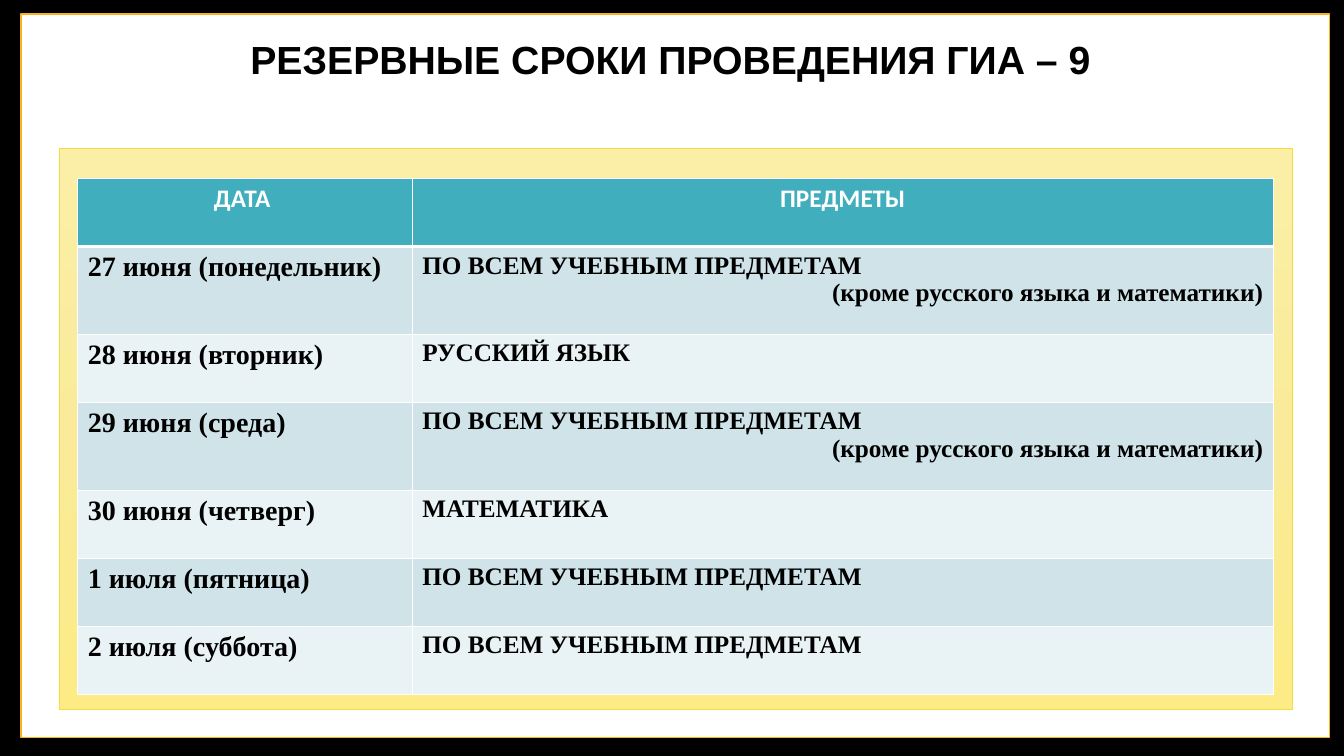
import copy

import lxml.etree
import pptx
import pptx.dml.color
import pptx.enum.shapes
import pptx.enum.text
import pptx.oxml.ns
import pptx.util

Pt = pptx.util.Pt
Color = pptx.dml.color.RGBColor
Align = pptx.enum.text.PP_ALIGN
qn = pptx.oxml.ns.qn

BLACK = Color(0x00, 0x00, 0x00)
WHITE = Color(0xFF, 0xFF, 0xFF)
AMBER = Color(0xFC, 0xB1, 0x1C)
GOLD = Color(0xF4, 0xDE, 0x3A)
GLOW = [Color(0xFB, 0xEF, 0xA7), Color(0xF9, 0xEB, 0x99), Color(0xFD, 0xEB, 0x85)]
TEAL = Color(0x41, 0xAE, 0xBD)
BANDS = [Color(0xE9, 0xF2, 0xF4), Color(0xCF, 0xE3, 0xE8)]

ALL = "ПО ВСЕМ УЧЕБНЫМ ПРЕДМЕТАМ"
EXCEPT = "(кроме русского языка и математики)"
HEAD = ["ДАТА ", "ПРЕДМЕТЫ"]
DATES = [
    ("27 июня (понедельник)", [ALL, EXCEPT]),
    ("28 июня (вторник)", ["РУССКИЙ ЯЗЫК"]),
    ("29 июня (среда)", [ALL, EXCEPT]),
    ("30 июня (четверг)", ["МАТЕМАТИКА"]),
    ("1 июля (пятница)", [ALL]),
    ("2 июля (суббота)", [ALL]),
]


def add_panel(slide, box, edge, width):
    panel = slide.shapes.add_shape(
        pptx.enum.shapes.MSO_SHAPE.RECTANGLE, *[Pt(n) for n in box])
    panel.shadow.inherit = False
    panel.line.color.rgb = edge
    panel.line.width = Pt(width)
    return panel


def set_glow(panel):
    """Fill with three even colour stops, from top to bottom."""
    fill = panel.fill
    fill.gradient()
    fill.gradient_angle = 270
    stops = panel._element.spPr.find(".//" + qn("a:gsLst"))
    stops.insert(1, copy.deepcopy(stops[0]))
    for i, (stop, color) in enumerate(zip(fill.gradient_stops, GLOW)):
        stop.position = i / 2
        stop.color.rgb = color


def set_text(frame, lines, font, size, color, aligns):
    for i, (line, align) in enumerate(zip(lines, aligns)):
        para = frame.paragraphs[0] if i == 0 else frame.add_paragraph()
        para.text = line
        para.alignment = align
        para.font.name = font
        para.font.size = Pt(size)
        para.font.bold = True
        para.font.color.rgb = color


def set_edges(cell, base):
    props = cell._tc.get_or_add_tcPr()
    for i, side in enumerate("LRTB"):
        width = base if side == "B" else 1
        edge = lxml.etree.Element(qn("a:ln" + side), w=str(Pt(width)))
        fill = lxml.etree.SubElement(edge, qn("a:solidFill"))
        lxml.etree.SubElement(fill, qn("a:srgbClr"), val=str(WHITE))
        props.insert(i, edge)


def fill_cell(cell, lines, font, size, color, aligns, back, base=1):
    set_text(cell.text_frame, lines, font, size, color, aligns)
    cell.fill.solid()
    cell.fill.fore_color.rgb = back
    set_edges(cell, base)


def add_dates(slide):
    frame = slide.shapes.add_table(
        len(DATES) + 1, 2, Pt(55.5), Pt(127.5), Pt(854), Pt(368.6))
    table = frame.table
    table.horz_banding = False
    for col, width in zip(table.columns, [239, 615]):
        col.width = Pt(width)

    # Header row
    table.rows[0].height = Pt(48.6)
    for i, name in enumerate(HEAD):
        fill_cell(table.cell(0, i), [name], "Calibri", 18, WHITE,
                  [Align.CENTER], TEAL, 3)

    # Rows of dates: a row with a remark is taller
    for i, (date, topics) in enumerate(DATES, 1):
        table.rows[i].height = Pt(62.8 if len(topics) > 1 else 48.6)
        for j, (lines, size) in enumerate([([date], 20), (topics, 18)]):
            fill_cell(table.cell(i, j), lines, "Times New Roman", size, BLACK,
                      [Align.LEFT, Align.RIGHT], BANDS[i % 2])


def main():
    deck = pptx.Presentation()
    deck.slide_width, deck.slide_height = Pt(960), Pt(540)
    slide = deck.slides.add_slide(deck.slide_layouts[6])
    slide.background.fill.solid()
    slide.background.fill.fore_color.rgb = BLACK

    # White sheet
    sheet = add_panel(slide, (15, 10, 934.5, 517), AMBER, 1)
    sheet.fill.solid()
    sheet.fill.fore_color.rgb = WHITE

    # Title
    title = slide.shapes.add_textbox(Pt(31.7), Pt(21.6), Pt(902), Pt(41))
    title.text_frame.word_wrap = True
    set_text(title.text_frame, ["РЕЗЕРВНЫЕ СРОКИ ПРОВЕДЕНИЯ ГИА – 9 "],
             "Arial", 28, BLACK, [Align.CENTER])

    # Yellow panel with the table of dates
    set_glow(add_panel(slide, (42.5, 106, 880.5, 401), GOLD, 0.5))
    add_dates(slide)

    deck.save("out.pptx")


if __name__ == "__main__":
    main()
